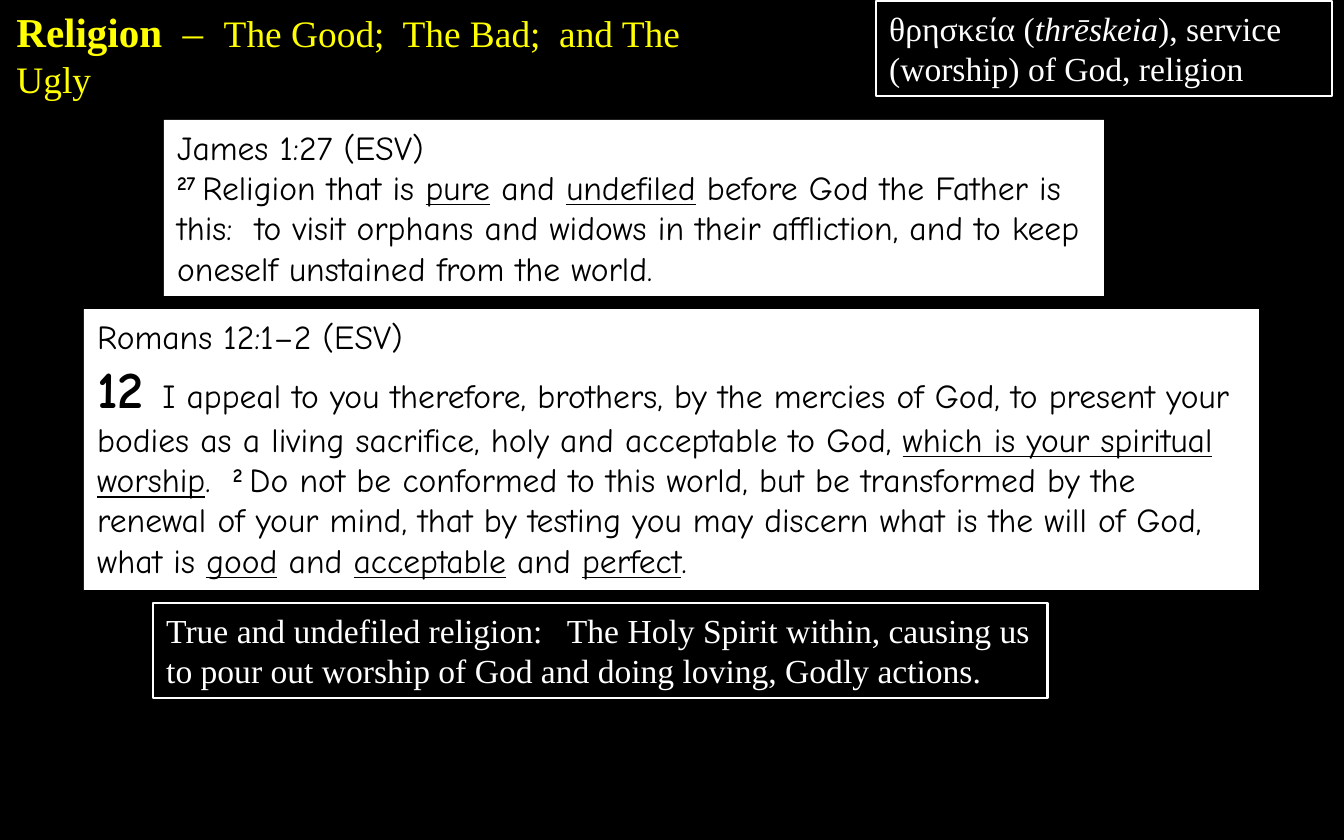
from pptx import Presentation
from pptx.dml.color import RGBColor
from pptx.enum.shapes import MSO_SHAPE
from pptx.enum.text import MSO_ANCHOR, MSO_AUTO_SIZE, PP_ALIGN
from pptx.util import Emu, Pt

BLACK = RGBColor(0, 0, 0)
WHITE = RGBColor(255, 255, 255)
YELLOW = RGBColor(255, 255, 0)
SERIF = "Times New Roman"
HAND = "Comic Neue"
SCALE = 914400 / 134.4  # EMU in one px

BOLD = {"bold": True}
LINED = {"under": True}
VERSE = {"bold": True, "base": 30}


def px(n):
    return Emu(round(n * SCALE))


def add_run(para, text, size=18, face=SERIF, color=WHITE, bold=False,
            italic=False, under=False, base=0):
    run = para.add_run()
    run.text = text
    font = run.font
    font.size, font.name = Pt(size), face
    font.bold, font.italic, font.underline = bold, italic, under
    font.color.rgb = color
    if base:
        run._r.get_or_add_rPr().set("baseline", str(base * 1000))


def fill_text(shape, paras, **base):
    """Each paragraph is a list of plain strings or (string, format) pairs."""
    frame = shape.text_frame
    frame.word_wrap = True
    frame.auto_size = MSO_AUTO_SIZE.SHAPE_TO_FIT_TEXT
    frame.vertical_anchor = MSO_ANCHOR.TOP
    for i, parts in enumerate(paras):
        para = frame.add_paragraph() if i else frame.paragraphs[0]
        para.alignment = PP_ALIGN.LEFT
        for part in parts:
            text, style = (part, {}) if isinstance(part, str) else part
            add_run(para, text, **{**base, **style})


def add_title(slide, box, parts):
    title = slide.shapes.title
    title.left, title.top, title.width, title.height = map(px, box)
    fill_text(title, [parts], size=20, color=YELLOW)


def add_rect(slide, box):
    rect = slide.shapes.add_shape(MSO_SHAPE.RECTANGLE, *map(px, box))
    rect.shadow.inherit = False
    return rect


def add_verse(slide, box, name, parts):
    rect = add_rect(slide, box)
    rect.fill.solid()
    rect.fill.fore_color.rgb = WHITE
    rect.line.fill.background()
    fill_text(rect, [[name], parts], face=HAND, color=BLACK)


def add_note(slide, box, parts, line):
    rect = add_rect(slide, box)
    rect.fill.background()
    rect.line.color.rgb = WHITE
    rect.line.width = Pt(line)
    fill_text(rect, [parts])


def main():
    deck = Presentation()
    deck.slide_width, deck.slide_height = px(1344), px(840)
    slide = deck.slides.add_slide(deck.slide_layouts[5])
    slide.background.fill.solid()
    slide.background.fill.fore_color.rgb = BLACK

    # Heading
    add_title(slide, (3, 0, 775, 63), [
        ("Religion", {"bold": True, "size": 22}), ("  –  ", {"size": 22}),
        "The Good;  The Bad;  and The Ugly"])

    # Bible passages
    add_verse(slide, (164, 120, 940, 176), "James 1:27 (ESV)", [
        ("27\u00a0", VERSE), "Religion that is ", ("pure", LINED), " and ",
        ("undefiled", LINED),
        " before God the Father is this:  to visit orphans and widows in "
        "their affliction, and to keep oneself unstained from the world."])
    add_verse(slide, (84, 309, 1175, 281), "Romans 12:1–2 (ESV)", [
        ("12\u00a0", {**BOLD, "size": 28}),
        "I appeal to you therefore, brothers, by the mercies of God, to "
        "present your bodies as a living sacrifice, holy and acceptable to "
        "God, ",
        ("which is your spiritual worship", LINED), ".  ",
        ("2\u00a0", VERSE),
        "Do not be conformed to this world, but be transformed by the "
        "renewal of your mind, that by testing you may discern what is the "
        "will of God, what is ",
        ("good", LINED), " and ", ("acceptable", LINED), " and ",
        ("perfect", LINED), "."])

    # Word meaning and summary
    add_note(slide, (876, 1, 456, 95), [
        "θρησκεία (", ("thrēskeia", {"italic": True}),
        "), service (worship) of God, religion"], 0.75)
    add_note(slide, (153, 603, 895, 95), [
        "True and undefiled religion:   The Holy Spirit within, causing us "
        "to pour out worship of God and doing loving, Godly actions."], 1.5)

    deck.save("out.pptx")


if __name__ == "__main__":
    main()
